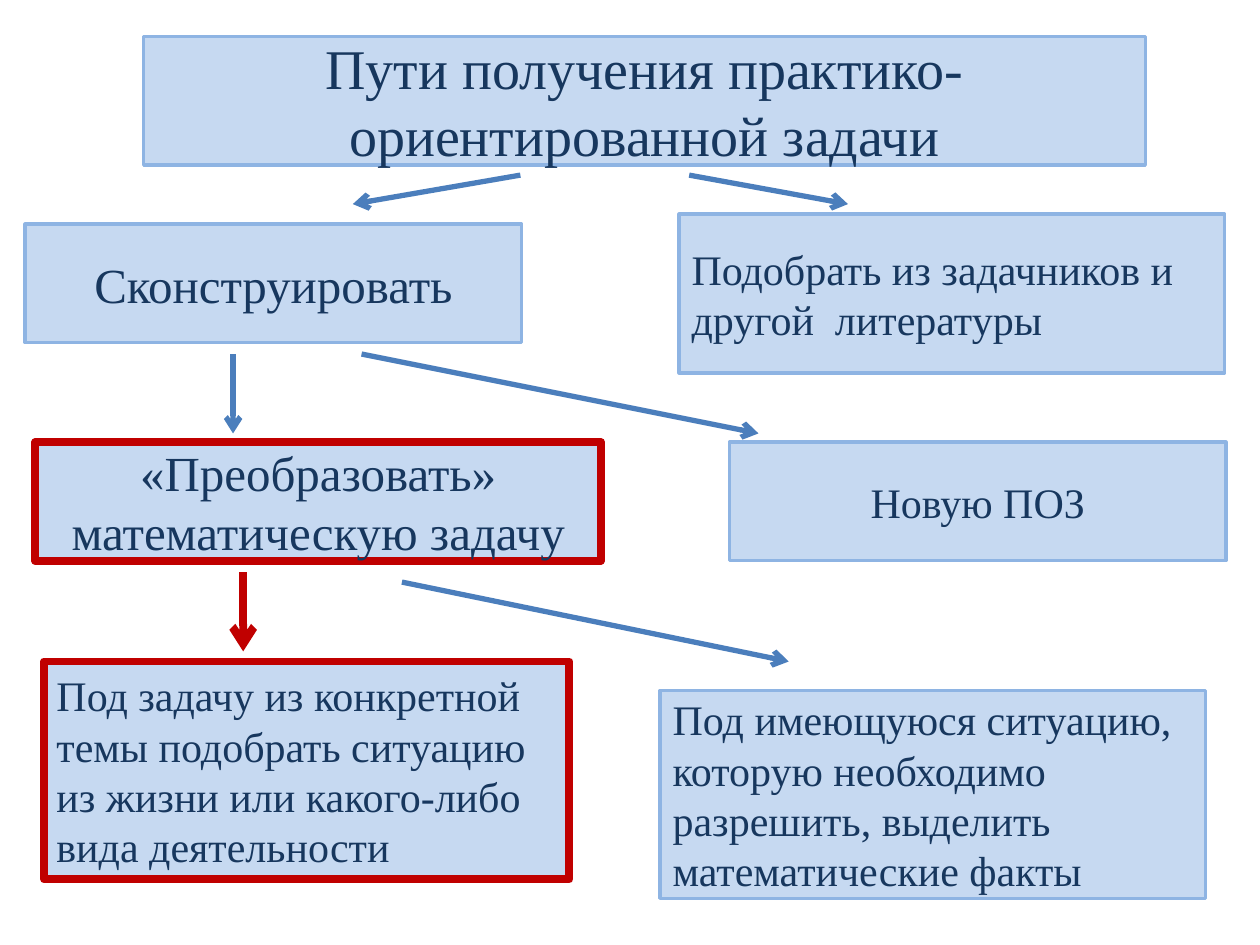
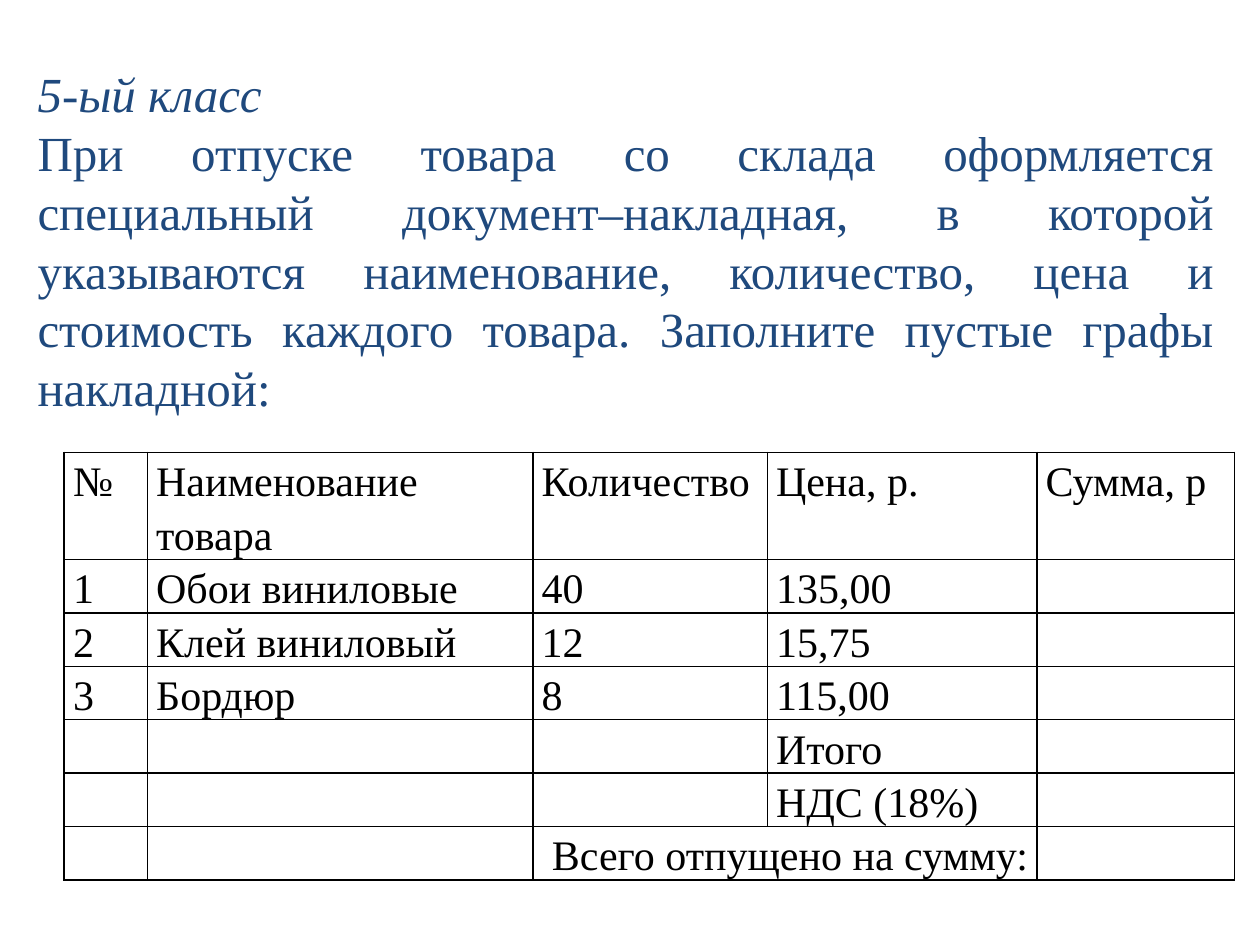
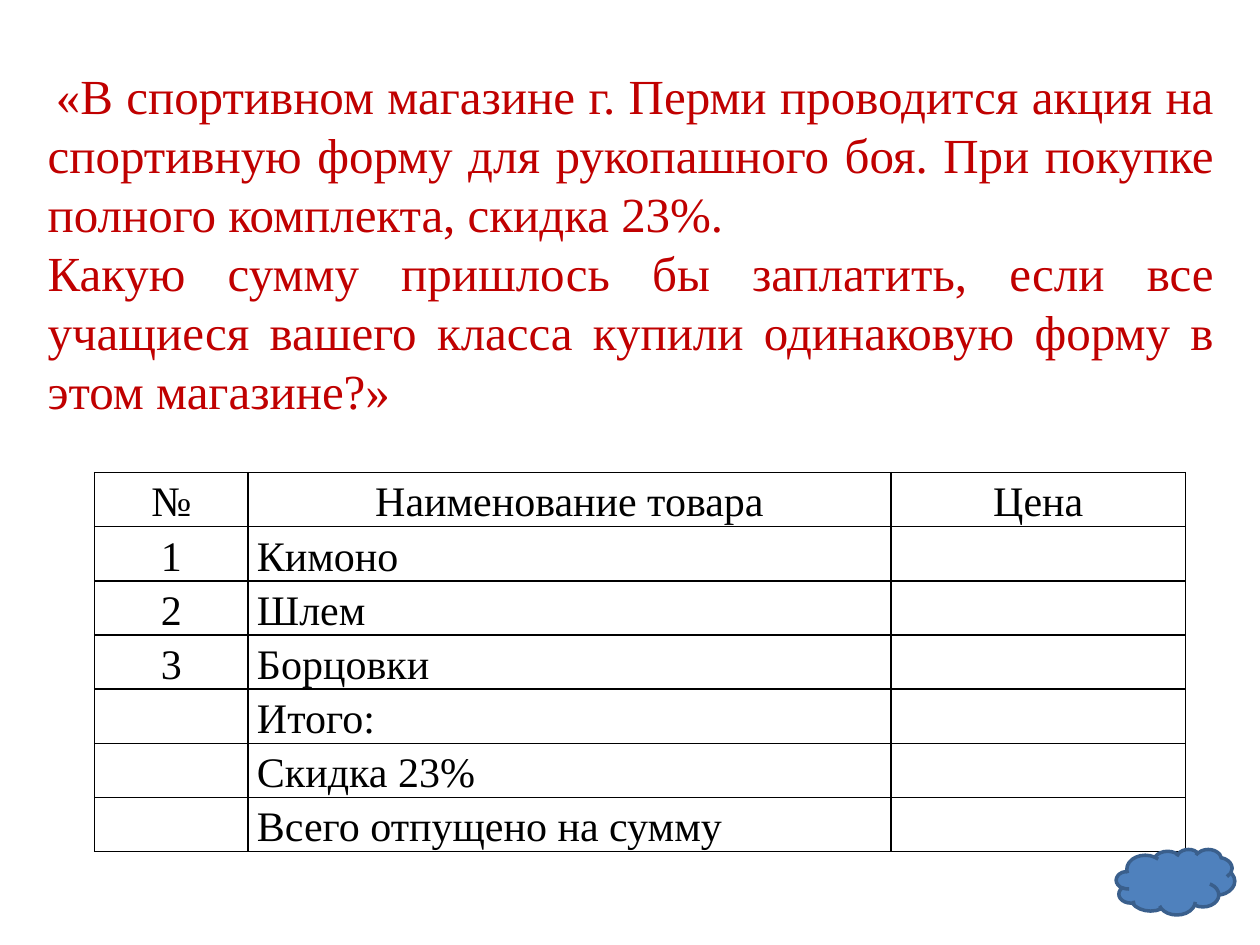
from dataclasses import dataclass

from lxml import etree
from pptx import Presentation
from pptx.dml.color import RGBColor
from pptx.enum import shapes, text
from pptx.oxml import ns
from pptx.util import Inches, Pt


@dataclass(frozen=True)
class Theme:
    font: str = "Times New Roman"
    space_font: str = "Arial"
    panel: str = "C6D9F1"
    panel_edge: str = "8EB4E3"
    panel_text: str = "17375E"
    accent: str = "C00000"
    arrow: str = "4B7EBC"
    task_text: str = "1F497D"
    cloud: str = "4F81BD"
    cloud_edge: str = "3A5F8C"
    ink: str = "000000"
    title: int = 32
    large: int = 28
    body: int = 24
    small: int = 14
    thin: float = 1
    edge: float = 2
    stroke: float = 3
    thick: float = 4.5


@dataclass(frozen=True)
class Box:
    left: float
    top: float
    width: float
    height: float

    def inner(self, left, top, width, height):
        return Box(self.left + left, self.top + top, width, height)

    def point(self, x, y):
        return Inches(self.left + x), Inches(self.top + y)

    def lengths(self):
        return [Inches(v) for v in (self.left, self.top, self.width, self.height)]


THEME = Theme()
LEFT, CENTER, RIGHT, JUSTIFY = (
    text.PP_ALIGN.LEFT,
    text.PP_ALIGN.CENTER,
    text.PP_ALIGN.RIGHT,
    text.PP_ALIGN.JUSTIFY,
)


def set_values(target, values):
    for name, value in values.items():
        setattr(target, name, value)


def add_span(para, words, size, color, font=THEME.font, italic=False):
    span = para.add_run()
    span.text = words
    set_values(span.font, {"size": Pt(size), "name": font, "italic": italic})
    span.font.color.rgb = RGBColor.from_string(color)


def fill_paragraphs(frame, paragraphs, align):
    set_values(frame, {"word_wrap": True, "vertical_anchor": text.MSO_ANCHOR.MIDDLE})
    for index, spans in enumerate(paragraphs):
        para = frame.add_paragraph() if index else frame.paragraphs[0]
        para.alignment = align
        for span in spans:
            add_span(para, **span)


def add_filled(page, kind, box, fill, edge, weight):
    shape = page.shapes.add_shape(kind, *box.lengths())
    shape.shadow.inherit = False
    shape.fill.solid()
    shape.fill.fore_color.rgb = RGBColor.from_string(fill)
    shape.line.color.rgb = RGBColor.from_string(edge)
    shape.line.width = Pt(weight)
    return shape


def add_panel(page, box, lines, size, align, marked=False):
    edge = (THEME.accent, THEME.thick) if marked else (THEME.panel_edge, THEME.edge)
    shape = add_filled(page, shapes.MSO_SHAPE.RECTANGLE, box, THEME.panel, *edge)
    paragraphs = [[{"words": line, "size": size, "color": THEME.panel_text}] for line in lines]
    fill_paragraphs(shape.text_frame, paragraphs, align)


def add_arrow(page, start, end, marked=False):
    arrow = page.shapes.add_connector(shapes.MSO_CONNECTOR.STRAIGHT, *start, *end)
    color, weight = (THEME.accent, THEME.thick) if marked else (THEME.arrow, THEME.stroke)
    arrow.line.color.rgb = RGBColor.from_string(color)
    arrow.line.width = Pt(weight)
    properties = arrow.element.spPr
    etree.SubElement(properties.find(ns.qn("a:ln")), ns.qn("a:tailEnd"), type="arrow")
    etree.SubElement(properties, ns.qn("a:effectLst"))


def add_task_text(page, box, paragraphs):
    frame = page.shapes.add_textbox(*box.lengths()).text_frame
    fill_paragraphs(frame, paragraphs, JUSTIFY)
    frame.auto_size = text.MSO_AUTO_SIZE.SHAPE_TO_FIT_TEXT


def add_borders(cell):
    properties = cell._tc.get_or_add_tcPr()
    for side in ("lnL", "lnR", "lnT", "lnB"):
        line = etree.SubElement(properties, ns.qn(f"a:{side}"), w=str(Pt(THEME.thin)))
        fill = etree.SubElement(line, ns.qn("a:solidFill"))
        etree.SubElement(fill, ns.qn("a:srgbClr"), val=THEME.ink)


def add_goods_table(page, box, widths, heights, rows, align_of):
    table = page.shapes.add_table(len(rows), len(widths), *box.lengths()).table
    set_values(table, {"first_row": False, "horz_banding": False})
    for column, width in zip(table.columns, widths):
        column.width = Inches(width)
    for row, height in zip(table.rows, heights):
        row.height = Inches(height)
    margins = {
        "margin_left": Inches(0.07),
        "margin_right": Inches(0.07),
        "margin_top": 0,
        "margin_bottom": 0,
    }
    for r, row in enumerate(rows):
        for c, words in enumerate(row):
            cell = table.cell(r, c)
            set_values(cell, margins)
            add_borders(cell)
            cell.fill.background()
            if words:
                para = cell.text_frame.paragraphs[0]
                set_values(para, {"alignment": align_of(r, c), "line_spacing": 1.15})
                add_span(para, words, THEME.body, THEME.ink)
    return table


def draw_paths(page, box):
    panels = [
        ((0.94, 0, 7.95, 1.02), ["Пути получения практико-ориентированной задачи"],
         THEME.title, CENTER, False),
        ((5.19, 1.41, 4.33, 1.26), ["Подобрать из задачников и", "другой  литературы"],
         THEME.body, LEFT, False),
        ((0, 1.49, 3.94, 0.94), ["Сконструировать"], THEME.large, CENTER, False),
        ((0.08, 3.22, 4.49, 0.94), ["«Преобразовать»", "математическую задачу"],
         THEME.large, CENTER, True),
        ((0.15, 4.96, 4.17, 1.73),
         ["Под задачу из конкретной темы подобрать ситуацию из жизни "
          "или какого-либо вида деятельности"],
         THEME.body, LEFT, True),
        ((5.04, 5.19, 4.33, 1.65),
         ["Под имеющуюся ситуацию, которую необходимо разрешить, "
          "выделить математические факты"],
         THEME.body, LEFT, False),
        ((5.59, 3.22, 3.94, 0.94), ["Новую ПОЗ"], THEME.body, CENTER, False),
    ]
    for place, *details in panels:
        add_panel(page, box.inner(*place), *details)
    arrows = [
        ((5.27, 1.1), (6.53, 1.33), False),
        ((3.93, 1.1), (2.6, 1.33), False),
        ((1.65, 2.52), (1.65, 3.15), False),
        ((2.67, 2.52), (5.82, 3.15), False),
        ((1.73, 4.25), (1.73, 4.88), True),
        ((2.99, 4.33), (6.06, 4.96), False),
    ]
    for start, end, marked in arrows:
        add_arrow(page, box.point(*start), box.point(*end), marked)


def draw_invoice(page, box):
    rows = [
        ["№", "Наименование товара", "Количество", "Цена, р.", "Сумма, р"],
        ["1", "Обои виниловые", "40", "135,00", ""],
        ["2", "Клей виниловый", "12", "15,75", ""],
        ["3", "Бордюр", "8", "115,00", ""],
        ["", "", "", "Итого", ""],
        ["", "", "", "НДС (18%)", ""],
        ["", "", "Всего отпущено на сумму:", "", ""],
    ]
    last = len(rows) - 1
    table = add_goods_table(
        page, box.inner(0.31, 3.15, 9.29, 3.4), [0.66, 3.06, 1.86, 2.14, 1.57],
        [0.85] + [0.42] * last, rows, lambda r, c: RIGHT if r == last else JUSTIFY,
    )
    table.cell(last, 2).merge(table.cell(last, 3))
    style = {"size": THEME.large, "color": THEME.task_text}
    add_task_text(page, box.inner(0, 0, 9.53, 2.93), [
        [{"words": "5-ый класс", "italic": True, **style}],
        [{"words": "При отпуске товара со склада оформляется специальный "
                   "документ–накладная, в которой указываются наименование, количество, "
                   "цена и стоимость каждого товара. Заполните пустые графы накладной:",
          **style}],
    ])


def draw_discount(page, box):
    goods = ["Кимоно", "Шлем", "Борцовки"]
    totals = ["Итого:", "Скидка 23%", "Всего отпущено на сумму"]
    rows = [["№", "Наименование товара", "Цена"]]
    rows += [[str(number), name, ""] for number, name in enumerate(goods, 1)]
    rows += [["", name, ""] for name in totals]
    add_goods_table(
        page, box.inner(0.47, 3.29, 8.66, 3.01), [1.22, 5.1, 2.34], [0.43] * len(rows),
        rows, lambda r, c: CENTER if r == 0 or c == 0 else LEFT,
    )
    style = {"size": THEME.large, "color": THEME.accent}
    add_task_text(page, box.inner(0, 0, 9.45, 2.93), [
        [{"words": " ", "size": THEME.small, "color": THEME.ink, "font": THEME.space_font},
         {"words": "«В спортивном магазине г. Перми проводится акция на спортивную "
                   "форму для рукопашного боя. При покупке полного комплекта, скидка 23%.",
          **style}],
        [{"words": "Какую сумму пришлось бы заплатить, если все учащиеся вашего класса "
                   "купили одинаковую форму в этом магазине?»", **style}],
    ])
    add_filled(page, shapes.MSO_SHAPE.CLOUD, box.inner(8.58, 6.28, 0.94, 0.52),
               THEME.cloud, THEME.cloud_edge, THEME.edge)


def main():
    deck = Presentation()
    set_values(deck, {"slide_width": Inches(10), "slide_height": Inches(7.5)})
    pages = [
        (draw_paths, Box(0.2, 0.29, 9.53, 6.84)),
        (draw_invoice, Box(0.2, 0.44, 9.6, 6.55)),
        (draw_discount, Box(0.28, 0.46, 9.52, 6.8)),
    ]
    for draw, box in pages:
        draw(deck.slides.add_slide(deck.slide_layouts[6]), box)
    deck.save("out.pptx")


if __name__ == "__main__":
    main()
